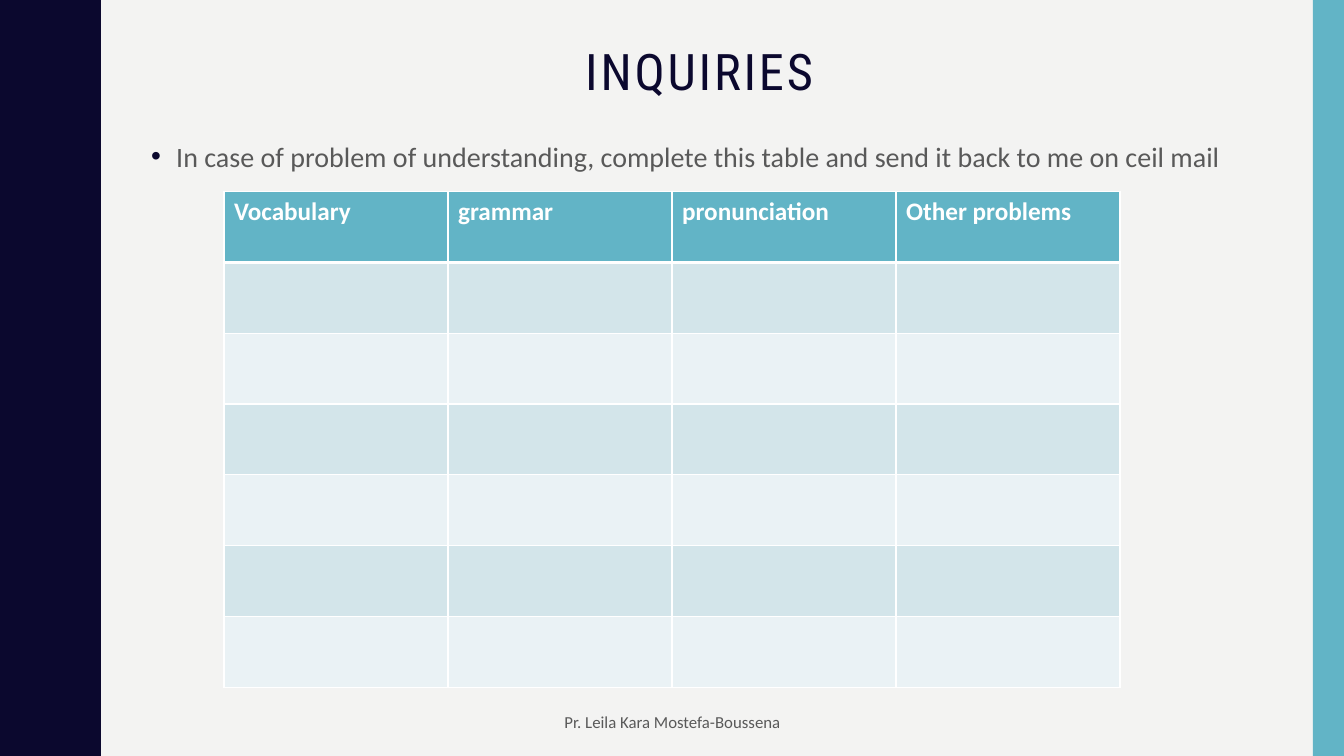
from lxml import etree
from pptx import Presentation
from pptx import util as u
from pptx.dml.color import RGBColor
from pptx.enum import shapes, text
from pptx.oxml import ns

theme = {
    "back": "F3F3F2", "navy": "0B082E", "teal": "62B4C6", "grey": "595959",
    "white": "FFFFFF", "bands": ("D3E5EA", "EAF2F5"),
    "head": "Roboto Condensed", "body": "Calibri",
    "title": 36, "lead": 20, "cell": 18, "foot": 12,
}


def paint(fill, color):
    fill.solid()
    fill.fore_color.rgb = RGBColor.from_string(color)


def style(par, size, color, face="body", bold=False):
    """Format every run of a paragraph from the theme."""
    for run in par.runs:
        font = run.font
        font.name, font.size, font.bold = theme[face], u.Pt(theme[size]), bold
        font.color.rgb = RGBColor.from_string(theme[color])


deck = Presentation()
deck.slide_width, deck.slide_height = u.Inches(13.33), u.Inches(7.5)
wide, high = deck.slide_width, deck.slide_height
slide = deck.slides.add_slide(deck.slide_layouts[5])
paint(slide.background.fill, theme["back"])

# Wavy left edge: half a wave, mirrored, then repeated down the slide
wave = 1.5
half = [(0.78, 0), (0.78, 0.07), (0.79, 0.14), (0.8, 0.2), (0.81, 0.25),
        (0.83, 0.29), (0.85, 0.33), (0.87, 0.38), (0.89, 0.42), (0.91, 0.46),
        (0.93, 0.5), (0.95, 0.55), (0.96, 0.61), (0.97, 0.68), (0.97, 0.75)]
cycle = half + [(x, wave - y) for x, y in half[-2::-1]]
edge = [(x, y + n * wave) for n in range(5) for x, y in cycle]
pen = slide.shapes.build_freeform(0, 0, scale=u.Inches(1))
pen.add_line_segments(edge + [(0, 7.5)], close=True)
curve = pen.convert_to_shape()
strip = u.Inches(0.31)
bar = slide.shapes.add_shape(shapes.MSO_SHAPE.RECTANGLE,
                             wide - strip, 0, strip, high)
for shape, color in ((curve, "navy"), (bar, "teal")):
    shape.shadow.inherit = False
    paint(shape.fill, theme[color])
    shape.line.fill.background()

# Title
title = slide.shapes.title
title.left, title.top = u.Inches(1.37), u.Inches(0.42)
title.width, title.height = u.Inches(11.13), u.Inches(0.88)
title.text_frame.text = "INQUIRIES"
title.text_frame.vertical_anchor = text.MSO_ANCHOR.TOP
par = title.text_frame.paragraphs[0]
par.alignment, par.line_spacing = text.PP_ALIGN.CENTER, 0.9
style(par, "title", "navy", "head")
par.runs[0].font._element.set("spc", "200")

# Instruction with a bullet
lead = slide.shapes.add_textbox(u.Inches(1.4), u.Inches(1.3),
                                u.Inches(11.13), u.Inches(3.93))
lead.text_frame.word_wrap = True
par = lead.text_frame.paragraphs[0]
par.text = ("In case of problem of understanding, complete this table "
            "and send it back to me on ceil mail")
par.line_spacing, par.space_before = 1.1, u.Pt(7)
style(par, "lead", "grey")
props = par._p.get_or_add_pPr()
props.set("marL", str(u.Inches(0.25)))
props.set("indent", str(-u.Inches(0.25)))
tint = etree.SubElement(props, ns.qn("a:buClr"))
etree.SubElement(tint, ns.qn("a:srgbClr"), val=theme["navy"])
etree.SubElement(props, ns.qn("a:buFont"), typeface="Arial")
etree.SubElement(props, ns.qn("a:buChar"), char="•")

# Footer
foot = slide.shapes.add_textbox(u.Inches(4.42), u.Inches(6.97),
                                u.Inches(4.5), u.Inches(0.38))
foot.text_frame.word_wrap = True
foot.text_frame.vertical_anchor = text.MSO_ANCHOR.MIDDLE
par = foot.text_frame.paragraphs[0]
par.text = "Pr. Leila Kara Mostefa-Boussena"
par.alignment = text.PP_ALIGN.CENTER
style(par, "foot", "grey")

# Table: a header and six banded rows, two thirds of the slide wide
heads = ["Vocabulary", "grammar", "pronunciation", "Other problems"]
count = 7
table = slide.shapes.add_table(count, len(heads), wide // 6, u.Inches(1.9),
                               wide * 2 // 3, u.Inches(4.92)).table
for row in range(count):
    for col, head in enumerate(heads):
        cell = table.cell(row, col)
        props = cell._tc.get_or_add_tcPr()
        for side in "LRTB":
            thick = (row, side) in ((0, "B"), (1, "T"))
            line = etree.SubElement(props, ns.qn("a:ln" + side),
                                    w=str(u.Pt(3 if thick else 1)))
            solid = etree.SubElement(line, ns.qn("a:solidFill"))
            etree.SubElement(solid, ns.qn("a:srgbClr"), val=theme["white"])
        if row == 0:
            cell.text_frame.text = head
            style(cell.text_frame.paragraphs[0], "cell", "white", bold=True)
            paint(cell.fill, theme["teal"])
        else:
            paint(cell.fill, theme["bands"][(row - 1) % 2])

deck.save("out.pptx")
